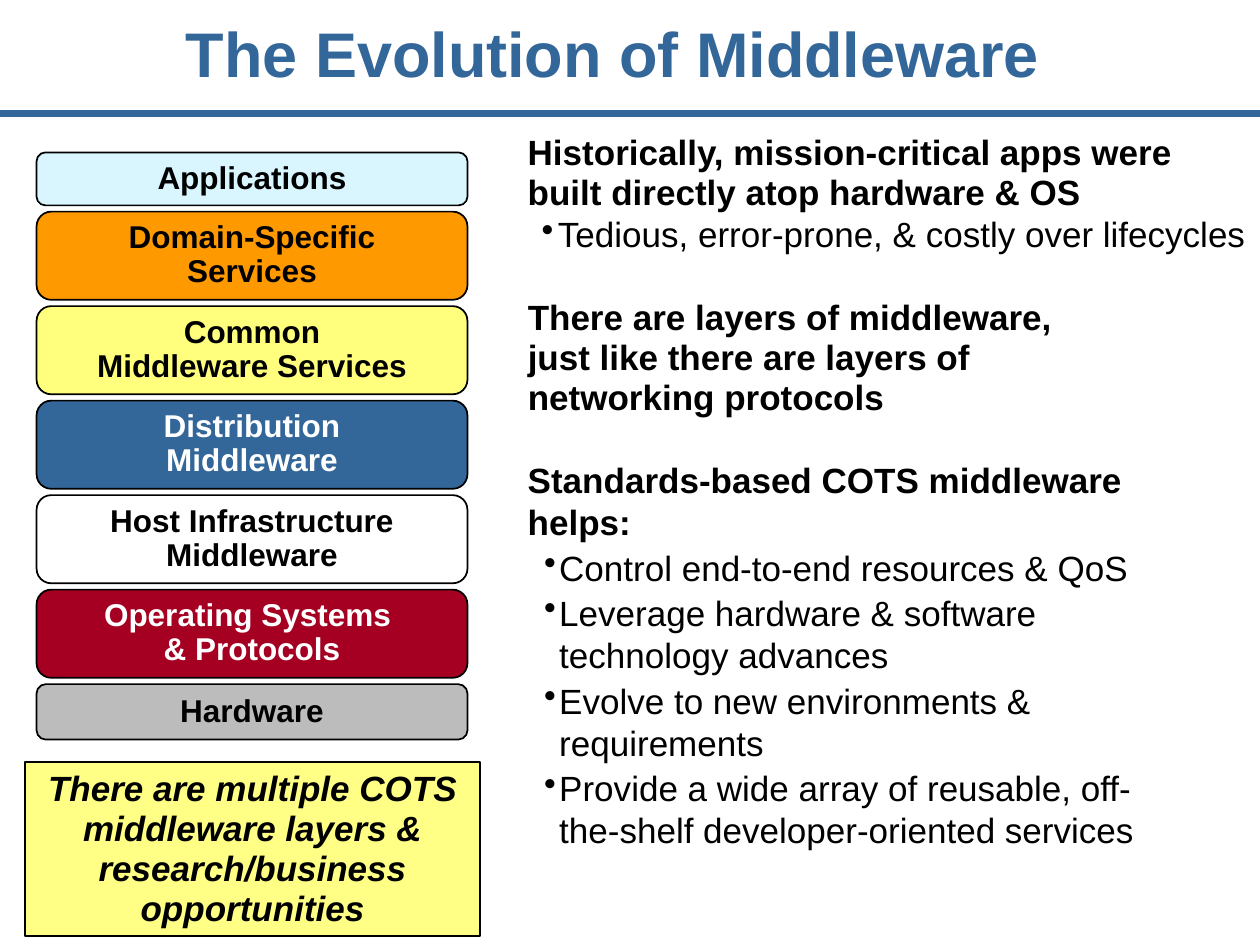
from dataclasses import dataclass

from lxml import etree
from pptx import Presentation
from pptx import util as u
from pptx.dml import color
from pptx.enum import shapes, text
from pptx.oxml import ns

EMU_PER_PX = 9144


@dataclass(frozen=True)
class Theme:
    font: str = "Arial"
    black: str = "000000"
    white: str = "FFFFFF"
    blue: str = "336699"
    note: str = "FFFF85"
    title_size: int = 36
    body_size: int = 20
    layer_size: int = 18
    number_size: int = 9


@dataclass(frozen=True)
class Box:
    left: int
    top: int
    width: int
    height: int


@dataclass(frozen=True)
class Style:
    size: int
    color: str = "000000"
    bold: bool = True
    italic: bool = False
    align: text.PP_ALIGN = text.PP_ALIGN.LEFT
    spacing: float = 1.0
    before: int = 0
    margin: int = 0
    hanging: int = 0


@dataclass(frozen=True)
class Line:
    words: str
    style: Style


@dataclass(frozen=True)
class Layer:
    lines: tuple[str, ...]
    height: int
    fill: str
    color: str = "000000"


THEME = Theme()
CENTER = text.PP_ALIGN.CENTER
HEADING = Style(THEME.body_size, spacing=0.95)
LIST_HEADING = Style(THEME.body_size)
POINT = Style(THEME.body_size, bold=False, spacing=0.95, margin=13, hanging=13)
LIST_POINT = Style(THEME.body_size, bold=False, before=2, margin=25, hanging=12)

LAYERS_LEFT, LAYERS_TOP, LAYERS_WIDTH, LAYER_GAP = 29, 121, 342, 5
LAYERS = (
    Layer(("Applications",), 42, "D9F6FF"),
    Layer(("Domain-Specific", "Services"), 70, "FF9900"),
    Layer(("Common", "Middleware Services"), 70, "FFFF7D"),
    Layer(("Distribution", "Middleware"), 70, THEME.blue, THEME.white),
    Layer(("Host Infrastructure", "Middleware"), 70, THEME.white),
    Layer(("Operating Systems ", "& Protocols"), 70, "A50021", THEME.white),
    Layer(("Hardware",), 44, "BCBCBC"),
)

BENEFITS = (
    "Control end-to-end resources & QoS",
    "Leverage hardware & software technology advances",
    "Evolve to new environments & requirements",
    "Provide a wide array of reusable, off-the-shelf developer-oriented services",
)

BODY = (
    (Box(409, 101, 557, 73), (
        Line("Historically, mission-critical apps were built directly atop hardware & OS", HEADING),
    )),
    (Box(420, 166, 597, 42), (
        Line("Tedious, error-prone, & costly over lifecycles", POINT),
    )),
    (Box(409, 232, 478, 105), (
        Line("There are layers of middleware, just like there are layers of networking protocols", HEADING),
    )),
    (Box(409, 359, 537, 323), (
        Line("Standards-based COTS middleware helps:", LIST_HEADING),
        *(Line(benefit, LIST_POINT) for benefit in BENEFITS),
    )),
)


def px(length: int) -> u.Emu:
    return u.Emu(length * EMU_PER_PX)


def place(box: Box) -> tuple[u.Emu, ...]:
    return px(box.left), px(box.top), px(box.width), px(box.height)


def rgb(value: str) -> color.RGBColor:
    return color.RGBColor.from_string(value)


def add_bullet(paragraph, style: Style) -> None:
    properties = paragraph._p.get_or_add_pPr()
    properties.set("marL", str(px(style.margin)))
    properties.set("indent", str(-px(style.hanging)))
    etree.SubElement(properties, ns.qn("a:buChar")).set("char", "•")


def write(frame, lines: tuple[Line, ...], anchor=text.MSO_ANCHOR.TOP) -> None:
    frame.word_wrap = True
    frame.vertical_anchor = anchor
    for index, line in enumerate(lines):
        style = line.style
        paragraph = frame.paragraphs[0] if index == 0 else frame.add_paragraph()
        if style.hanging:
            add_bullet(paragraph, style)
        paragraph.alignment = style.align
        paragraph.line_spacing = style.spacing
        if index and style.before:
            paragraph.space_before = u.Pt(style.before)
        run = paragraph.add_run()
        run.text = line.words
        run.font.name = THEME.font
        run.font.size = u.Pt(style.size)
        run.font.bold = style.bold
        run.font.italic = style.italic
        run.font.color.rgb = rgb(style.color)


def add_text(slide, box: Box, lines: tuple[Line, ...], anchor=text.MSO_ANCHOR.TOP):
    shape = slide.shapes.add_textbox(*place(box))
    write(shape.text_frame, lines, anchor)
    return shape


def add_panel(slide, kind: shapes.MSO_SHAPE, box: Box, fill: str, lines: tuple[Line, ...]) -> None:
    shape = slide.shapes.add_shape(kind, *place(box))
    shape.shadow.inherit = False
    shape.fill.solid()
    shape.fill.fore_color.rgb = rgb(fill)
    shape.line.color.rgb = rgb(THEME.black)
    shape.line.width = u.Pt(1)
    write(shape.text_frame, lines, text.MSO_ANCHOR.MIDDLE)


def add_rule(slide, top: int, width: int) -> None:
    rule = slide.shapes.add_connector(
        shapes.MSO_CONNECTOR.STRAIGHT, px(0), px(top), px(width), px(top))
    rule.line.color.rgb = rgb(THEME.blue)
    rule.line.width = u.Pt(3.75)
    etree.SubElement(rule._element.spPr, ns.qn("a:effectLst"))


def add_layers(slide) -> None:
    top = LAYERS_TOP
    for layer in LAYERS:
        style = Style(THEME.layer_size, layer.color, align=CENTER, spacing=0.9)
        box = Box(LAYERS_LEFT, top, LAYERS_WIDTH, layer.height)
        lines = tuple(Line(words, style) for words in layer.lines)
        add_panel(slide, shapes.MSO_SHAPE.ROUNDED_RECTANGLE, box, layer.fill, lines)
        top += layer.height + LAYER_GAP


def add_slide_number(slide) -> None:
    style = Style(THEME.number_size, bold=False, align=text.PP_ALIGN.RIGHT, spacing=0.9)
    frame = add_text(slide, Box(0, 732, 28, 13), (Line("8", style),)).text_frame
    frame.margin_left = frame.margin_right = frame.margin_top = frame.margin_bottom = 0


def main() -> None:
    presentation = Presentation()
    presentation.slide_width, presentation.slide_height = px(1000), px(750)
    slide = presentation.slides.add_slide(presentation.slide_layouts[6])

    add_rule(slide, 90, 1000)
    add_slide_number(slide)
    title = Style(THEME.title_size, THEME.blue, align=CENTER, spacing=0.85)
    add_text(slide, Box(0, -4, 973, 100),
             (Line("The Evolution of Middleware", title),), text.MSO_ANCHOR.MIDDLE)
    note = Style(THEME.body_size, italic=True, align=CENTER, spacing=0.95)
    add_panel(slide, shapes.MSO_SHAPE.RECTANGLE, Box(20, 605, 361, 138), THEME.note, (
        Line("There are multiple COTS middleware layers & research/business opportunities", note),))
    for box, lines in BODY:
        add_text(slide, box, lines)
    add_layers(slide)

    presentation.save("out.pptx")


if __name__ == "__main__":
    main()
